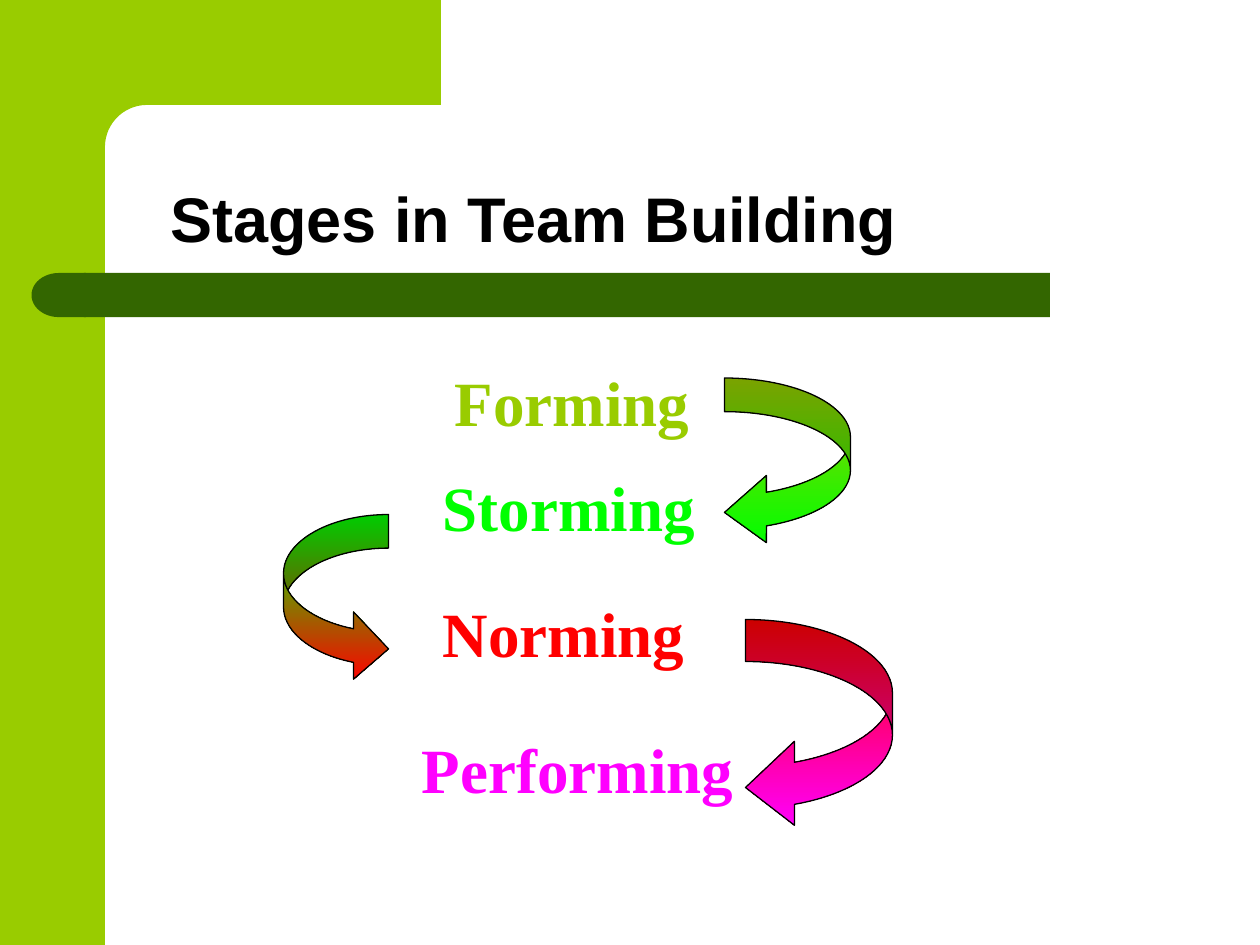
import math

from pptx import Presentation
from pptx.dml.color import RGBColor
from pptx.enum.shapes import MSO_SHAPE
from pptx.enum.text import MSO_ANCHOR, MSO_AUTO_SIZE, PP_ALIGN
from pptx.util import Pt

RECT = MSO_SHAPE.RECTANGLE
DELAY = MSO_SHAPE.FLOWCHART_DELAY
LEFT_ARROW = MSO_SHAPE.CURVED_LEFT_ARROW
RIGHT_ARROW = MSO_SHAPE.CURVED_RIGHT_ARROW
LEFT, CENTER = PP_ALIGN.LEFT, PP_ALIGN.CENTER

THEME = {
    "frame": "99CC00", "bar": "336600", "ink": "000000",
    "forming": "99CC00", "storming": "00FF00",
    "norming": "FF0000", "performing": "FF00FF",
    "title_font": "Arial", "stage_font": "Times New Roman",
    "size": 36, "outline": 0.75,
}

# Content: boxes are left, top, width, height in points
TITLE = "Stages in Team Building"
TITLE_BOX = (60, 60, 624, 90)
STAGES = [
    ("Forming", (252, 204, 150, 50.4), CENTER),
    ("Storming", (246, 264, 168, 50.4), LEFT),
    ("Norming", (246, 336, 162, 50.4), LEFT),
    ("Performing", (234, 414, 198, 50.4), LEFT),
]
# Each arrow leads from one stage to the next
ARROWS = [
    (LEFT_ARROW, (414, 216, 72, 96), (0.267, 0.533, 0.333)),
    (RIGHT_ARROW, (162, 294, 60, 96), (0.32, 0.64, 0.333)),
    (LEFT_ARROW, (426, 354, 84, 120), (0.286, 0.571, 0.333)),
]
SIDE_BAND = (0, 0, 60, 540)
TITLE_BAR = (48, 156, 552, 25.2)
BAR_END = (18, 156, 31, 25.2)
TOP_BAND_RIGHT, BAND, CORNER_RADIUS = 252, 60, 24


def color(name):
    return RGBColor.from_string(THEME[name])


def box(bounds):
    return [Pt(length) for length in bounds]


def paint(shape, fill):
    shape.shadow.inherit = False
    shape.fill.solid()
    shape.fill.fore_color.rgb = color(fill)
    shape.line.fill.background()


def write(frame, text, font, ink, align):
    frame.text = text
    paragraph = frame.paragraphs[0]
    paragraph.alignment = align
    run_font = paragraph.runs[0].font
    run_font.name, run_font.size, run_font.bold = font, Pt(THEME["size"]), True
    run_font.color.rgb = color(ink)


prs = Presentation()
prs.slide_width, prs.slide_height = Pt(720), Pt(540)
slide = prs.slides.add_slide(prs.slide_layouts[5])
shapes = slide.shapes

# Green frame: side band, then top band with a rounded inner corner
paint(shapes.add_shape(RECT, *box(SIDE_BAND)), "frame")
center = BAND + CORNER_RADIUS
corner = []
for degrees in range(0, 91, 6):
    angle = math.radians(degrees)
    corner.append((center - CORNER_RADIUS * math.sin(angle),
                   center - CORNER_RADIUS * math.cos(angle)))
outline = [(TOP_BAND_RIGHT, BAND), *corner, (BAND, 92), (36, 92), (36, 0)]
builder = shapes.build_freeform(Pt(TOP_BAND_RIGHT), 0)
builder.add_line_segments([(Pt(x), Pt(y)) for x, y in outline], close=True)
paint(builder.convert_to_shape(), "frame")

# Dark bar under the title, rounded at its left end
paint(shapes.add_shape(RECT, *box(TITLE_BAR)), "bar")
bar_end = shapes.add_shape(DELAY, *box(BAR_END))
bar_end.rotation = 180
paint(bar_end, "bar")

# Title
title = shapes.title
title.left, title.top, title.width, title.height = box(TITLE_BOX)
frame = title.text_frame
frame.auto_size = MSO_AUTO_SIZE.NONE
frame.vertical_anchor = MSO_ANCHOR.BOTTOM
frame.margin_left = Pt(37.2)
write(frame, TITLE, THEME["title_font"], "ink", LEFT)
frame.paragraphs[0].line_spacing = 0.9

# Stage names
for stage, bounds, align in STAGES:
    frame = shapes.add_textbox(*box(bounds)).text_frame
    frame.word_wrap = True
    write(frame, stage, THEME["stage_font"], stage.lower(), align)

# Curved arrows, shaded from one stage's colour to the next
for (kind, bounds, adjustments), start, end in zip(ARROWS, STAGES, STAGES[1:]):
    arrow = shapes.add_shape(kind, *box(bounds))
    arrow.shadow.inherit = False
    for index, value in enumerate(adjustments):
        arrow.adjustments[index] = value
    arrow.fill.gradient()
    arrow.fill.gradient_angle = 270
    for stop, stage in zip(arrow.fill.gradient_stops, (start, end)):
        stop.color.rgb = color(stage[0].lower())
    arrow.line.color.rgb = color("ink")
    arrow.line.width = Pt(THEME["outline"])

prs.save("out.pptx")
